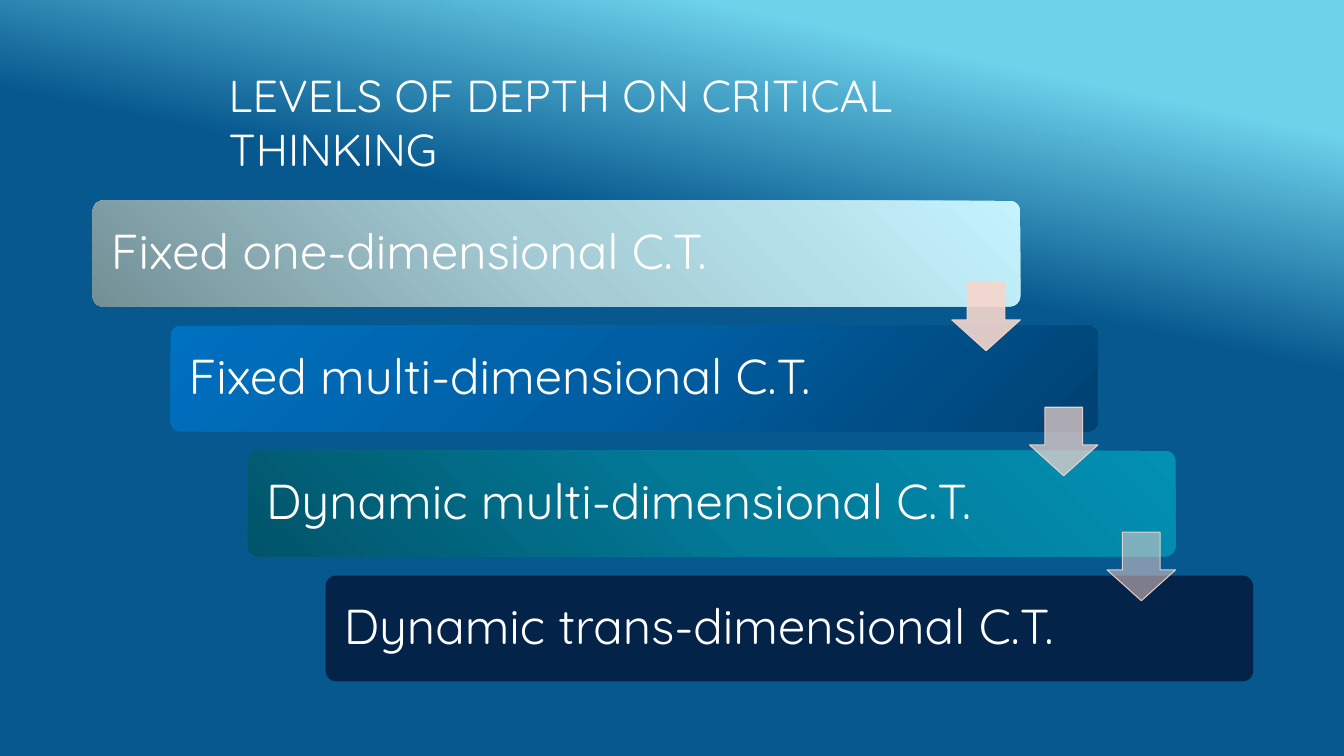
import lxml.etree
import pptx
import pptx.dml.color
import pptx.enum.shapes
import pptx.enum.text
import pptx.oxml.ns
import pptx.util

Inches = pptx.util.Inches
Pt = pptx.util.Pt
qn = pptx.oxml.ns.qn
MSO_SHAPE = pptx.enum.shapes.MSO_SHAPE
MSO_ANCHOR = pptx.enum.text.MSO_ANCHOR

TITLE = "LEVELS OF DEPTH ON CRITICAL THINKING"
LEFT_BOTTOM = {"l": 0, "t": 100, "r": 100, "b": 0}
RIGHT_BOTTOM = {"l": 100, "t": 100, "r": 0, "b": 0}
LEVELS = [
    ("Fixed one-dimensional C.T.", ["749097", "A6CDD6", "C4F3FE"], LEFT_BOTTOM),
    ("Fixed multi-dimensional C.T.", ["004272", "005EA2", "0070C0"], RIGHT_BOTTOM),
    ("Dynamic multi-dimensional C.T.", ["01556A", "027997", "0290B3"], LEFT_BOTTOM),
    ("Dynamic trans-dimensional C.T.", ["042349"], None),
]
ARROW_OPACITY = [90, 70, 50]
THEME = {
    "font": "Quicksand",
    "text": "FFFFFF",
    "title_size": 32,
    "level_size": 35,
    "arrow": "F6D7CE",
    "arrow_line_opacity": 90,
    "background": [(13, "6ED2EB"), (36, "06588E")],
    "background_angle": 102,
}

BAR_LEFT, BAR_TOP, BAR_W, BAR_H = 0.92, 1.99, 9.2, 1.05
STEP_X, STEP_Y = 0.77, 1.24
ARROW_SIZE, ARROW_DROP = 0.68, 0.81


def rgb(value):
    return pptx.dml.color.RGBColor.from_string(value)


def set_gradient(fill, parent, stops, angle=None, focus=None):
    fill.solid()
    solid = parent.find(qn("a:solidFill"))
    grad = lxml.etree.Element(qn("a:gradFill"), rotWithShape="1")
    gs_list = lxml.etree.SubElement(grad, qn("a:gsLst"))
    for pos, color in stops:
        gs = lxml.etree.SubElement(gs_list, qn("a:gs"), pos=str(pos * 1000))
        lxml.etree.SubElement(gs, qn("a:srgbClr"), val=color)
    if focus:
        circle = lxml.etree.SubElement(grad, qn("a:path"), path="circle")
        sides = {side: str(pct * 1000) for side, pct in focus.items()}
        lxml.etree.SubElement(circle, qn("a:fillToRect"), **sides)
    else:
        lxml.etree.SubElement(grad, qn("a:lin"), ang=str(angle * 60000), scaled="0")
    parent.replace(solid, grad)


def set_opacity(color, percent):
    lxml.etree.SubElement(color, qn("a:alpha"), val=str(percent * 1000))


def add_text(tf, text, size):
    tf.word_wrap = True
    p = tf.paragraphs[0]
    p.alignment = pptx.enum.text.PP_ALIGN.LEFT
    r = p.add_run()
    r.text = text
    r.font.name = THEME["font"]
    r.font.size = Pt(size)
    r.font.color.rgb = rgb(THEME["text"])
    return p


def add_bar(slide, index, text, colors, focus):
    sp = slide.shapes.add_shape(
        MSO_SHAPE.ROUNDED_RECTANGLE,
        Inches(BAR_LEFT + index * STEP_X), Inches(BAR_TOP + index * STEP_Y),
        Inches(BAR_W), Inches(BAR_H))
    sp.adjustments[0] = 0.1
    sp.shadow.inherit = False
    sp.line.fill.background()
    if focus:
        set_gradient(sp.fill, sp.element.spPr, list(zip((0, 50, 100), colors)), focus=focus)
    else:
        sp.fill.solid()
        sp.fill.fore_color.rgb = rgb(colors[0])
    tf = sp.text_frame
    tf.margin_left = tf.margin_right = Inches(0.15)
    tf.margin_top = tf.margin_bottom = Inches(0.15)
    tf.vertical_anchor = MSO_ANCHOR.MIDDLE
    add_text(tf, text, THEME["level_size"]).line_spacing = 0.9


def add_arrow(slide, index, opacity):
    sp = slide.shapes.add_shape(
        MSO_SHAPE.DOWN_ARROW,
        Inches(BAR_LEFT + index * STEP_X + BAR_W - ARROW_SIZE),
        Inches(BAR_TOP + index * STEP_Y + ARROW_DROP),
        Inches(ARROW_SIZE), Inches(ARROW_SIZE))
    sp.adjustments[0] = 0.55
    sp.adjustments[1] = 0.45
    sp.shadow.inherit = False
    sp.fill.solid()
    sp.fill.fore_color.rgb = rgb(THEME["arrow"])
    sp.line.color.rgb = rgb(THEME["arrow"])
    sp.line.width = Pt(0.75)
    fill_color, line_color = sp.element.spPr.xpath(".//a:srgbClr")
    set_opacity(fill_color, opacity)
    set_opacity(line_color, THEME["arrow_line_opacity"])


def main():
    prs = pptx.Presentation()
    prs.slide_width, prs.slide_height = Inches(13.33), Inches(7.5)
    slide = prs.slides.add_slide(prs.slide_layouts[6])
    fill = slide.background.fill
    set_gradient(fill, slide.element.xpath(".//p:bgPr")[0],
                 THEME["background"], angle=THEME["background_angle"])
    for index, (text, colors, focus) in enumerate(LEVELS):
        add_bar(slide, index, text, colors, focus)
    for index, opacity in enumerate(ARROW_OPACITY):
        add_arrow(slide, index, opacity)
    title = slide.shapes.add_textbox(Inches(2.17), Inches(0.62), Inches(8.91), Inches(0.64))
    add_text(title.text_frame, TITLE, THEME["title_size"])
    title.text_frame.auto_size = pptx.enum.text.MSO_AUTO_SIZE.SHAPE_TO_FIT_TEXT
    prs.save("out.pptx")


if __name__ == "__main__":
    main()
